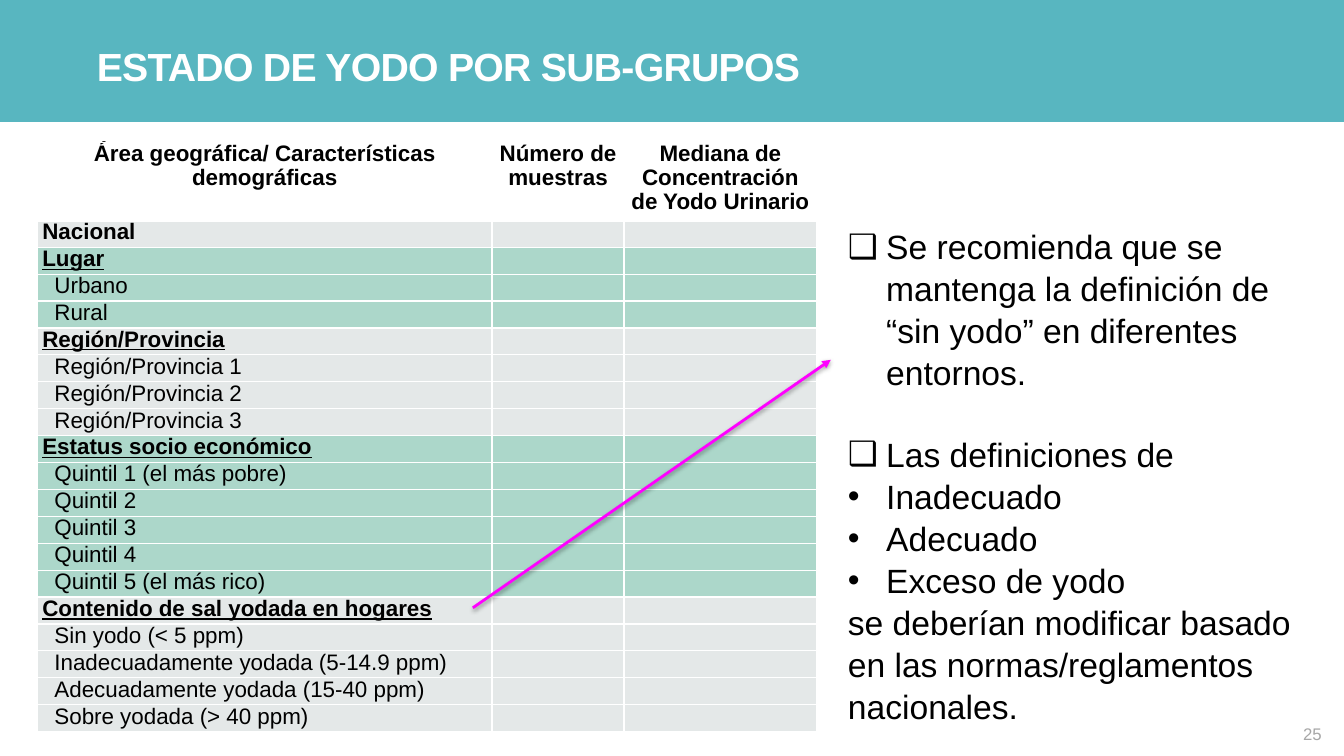
"""Build the slide on iodine status by sub-group."""
from typing import NamedTuple, Optional

from lxml.etree import SubElement
from pptx import Presentation
from pptx.dml.color import RGBColor
from pptx.enum.shapes import MSO_CONNECTOR, MSO_SHAPE
from pptx.enum.text import MSO_ANCHOR, PP_ALIGN
from pptx.oxml.ns import qn
from pptx.util import Inches, Pt

WHITE = RGBColor(0xFF, 0xFF, 0xFF)
BLACK = RGBColor(0x00, 0x00, 0x00)
TEAL = RGBColor(0x58, 0xB6, 0xC0)
GREEN = RGBColor(0xAC, 0xD7, 0xCA)
PALE = RGBColor(0xE4, 0xE8, 0xE8)
GREY = RGBColor(0xA7, 0xA7, 0xA7)
MAGENTA = RGBColor(0xFF, 0x00, 0xFF)


class Group(NamedTuple):
    heading: str
    fill: RGBColor
    members: tuple[str, ...] = ()
    underline: bool = True


class Remark(NamedTuple):
    text: str
    bullet: Optional[str] = None
    gap: float = 0


HEADERS = (
    "Área geográfica/ Características demográficas",
    "Número de muestras",
    "Mediana de Concentración de Yodo Urinario",
)
COLUMN_WIDTHS = (4.51, 1.31, 1.91)
HEADER_HEIGHT = 0.76
ROW_HEIGHT = 0.24

GROUPS = (
    Group("Nacional", PALE, underline=False),
    Group("Lugar", GREEN, ("Urbano", "Rural")),
    Group("Región/Provincia", PALE, tuple(f"Región/Provincia {n}" for n in (1, 2, 3))),
    Group("Estatus socio económico", GREEN, (
        "Quintil 1 (el más pobre)", "Quintil 2", "Quintil 3", "Quintil 4",
        "Quintil 5 (el más rico)")),
    Group("Contenido de sal yodada en hogares", PALE, (
        "Sin yodo (< 5 ppm)", "Inadecuadamente yodada (5-14.9 ppm)",
        "Adecuadamente yodada (15-40 ppm)", "Sobre yodada (> 40 ppm)")),
)

REMARKS = (
    Remark("Se recomienda que se mantenga la definición de “sin yodo” en diferentes entornos.", "❑"),
    Remark("Las definiciones de", "❑", gap=28.8),
    Remark("Inadecuado", "•"),
    Remark("Adecuado", "•"),
    Remark("Exceso de yodo", "•"),
    Remark("se deberían modificar basado en las normas/reglamentos nacionales."),
)


def write(paragraph, text: str, *, size: float, color: RGBColor = BLACK,
          bold: bool = False, underline: bool = False, align=PP_ALIGN.LEFT,
          spacing: float = 1.0, before: float = 0, indent: float = 0,
          bullet: Optional[str] = None, tracking: int = 0) -> None:
    """Write one formatted run into a paragraph."""
    paragraph.alignment = align
    paragraph.line_spacing = spacing
    if before:
        paragraph.space_before = Pt(before)
    properties = paragraph._p.get_or_add_pPr()
    if indent:
        properties.set("marL", str(Inches(indent)))
    if bullet:
        properties.set("indent", str(-Inches(indent)))
        SubElement(properties, qn("a:buFont"), typeface="Arial")
        SubElement(properties, qn("a:buChar"), char=bullet)
    if not text:
        SubElement(paragraph._p, qn("a:endParaRPr"), sz=str(int(size * 100)))
        return
    run = paragraph.add_run()
    run.text = text
    font = run.font
    font.name, font.size, font.bold, font.underline = "Arial", Pt(size), bold, underline
    font.color.rgb = color
    if tracking:
        run._r.get_or_add_rPr().set("spc", str(tracking))


def add_frame(slide, left: float, top: float, width: float, height: float, *,
              inset: float = 0.05, anchor=MSO_ANCHOR.TOP, wrap: bool = True):
    """Add a text box and return its text frame."""
    frame = slide.shapes.add_textbox(
        Inches(left), Inches(top), Inches(width), Inches(height)).text_frame
    frame.word_wrap = wrap
    frame.vertical_anchor = anchor
    frame.margin_left = frame.margin_right = Inches(inset)
    frame.margin_top = frame.margin_bottom = Inches(inset)
    return frame


def style_cell(cell, fill: RGBColor, bottom_width: float = 1) -> None:
    """Set the margins, white borders and fill of a cell."""
    cell.margin_left = cell.margin_right = Inches(0.05)
    cell.margin_top = cell.margin_bottom = 0
    properties = cell._tc.get_or_add_tcPr()
    for side, width in (("L", 1), ("R", 1), ("T", 1), ("B", bottom_width)):
        border = SubElement(properties, qn(f"a:ln{side}"), w=str(Pt(width)))
        SubElement(SubElement(border, qn("a:solidFill")), qn("a:srgbClr"), val=str(WHITE))
    cell.fill.solid()
    cell.fill.fore_color.rgb = fill


def add_iodine_table(slide) -> None:
    """Add the table of sub-groups."""
    row_count = 1 + sum(1 + len(group.members) for group in GROUPS)
    table = slide.shapes.add_table(
        row_count, len(HEADERS), Inches(0.37), Inches(1.41), Inches(sum(COLUMN_WIDTHS)),
        Inches(HEADER_HEIGHT + ROW_HEIGHT * (row_count - 1))).table
    for column, width in zip(table.columns, COLUMN_WIDTHS):
        column.width = Inches(width)
    for index, row in enumerate(table.rows):
        row.height = Inches(ROW_HEIGHT if index else HEADER_HEIGHT)
    for cell, header in zip(table.rows[0].cells, HEADERS):
        style_cell(cell, WHITE, bottom_width=3)
        write(cell.text_frame.paragraphs[0], header, size=16, bold=True,
              align=PP_ALIGN.CENTER, spacing=0.97)
    entries = [(group, text) for group in GROUPS for text in (group.heading, *group.members)]
    for index, (group, text) in enumerate(entries, start=1):
        is_heading = text == group.heading
        for column, cell in enumerate(table.rows[index].cells):
            style_cell(cell, group.fill)
            write(cell.text_frame.paragraphs[0], "" if column else text, size=16,
                  bold=is_heading, underline=is_heading and group.underline,
                  indent=0 if is_heading else 0.12, spacing=0.97)


def add_remarks(slide) -> None:
    """Add the recommendations beside the table."""
    frame = add_frame(slide, 8.36, 2.18, 4.51, 5.35)
    for index, remark in enumerate(REMARKS):
        paragraph = frame.add_paragraph() if index else frame.paragraphs[0]
        write(paragraph, remark.text, size=24, bullet=remark.bullet, before=remark.gap,
              indent=0.38 if remark.bullet else 0, spacing=1.04)


def add_arrow(slide) -> None:
    """Add the shadowed arrow from the table to the recommendation."""
    arrow = slide.shapes.add_connector(
        MSO_CONNECTOR.STRAIGHT, Inches(4.69), Inches(6.03), Inches(8.24), Inches(3.57))
    arrow.line.color.rgb = MAGENTA
    arrow.line.width = Pt(2)
    SubElement(arrow.line._get_or_add_ln(), qn("a:tailEnd"), type="triangle")
    effects = SubElement(arrow._element.spPr, qn("a:effectLst"))
    shadow = SubElement(effects, qn("a:outerShdw"), blurRad=str(Pt(3)), dist=str(Pt(1.6)),
                        dir="5400000", rotWithShape="0")
    tint = SubElement(shadow, qn("a:srgbClr"), val=str(BLACK))
    SubElement(tint, qn("a:alpha"), val="38000")


def main() -> None:
    """Build and save the slide."""
    deck = Presentation()
    deck.slide_width, deck.slide_height = Inches(13.33), Inches(7.5)
    slide = deck.slides.add_slide(deck.slide_layouts[6])
    banner = slide.shapes.add_shape(MSO_SHAPE.RECTANGLE, 0, 0, deck.slide_width, Inches(1.21))
    banner.shadow.inherit = False
    banner.fill.solid()
    banner.fill.fore_color.rgb = TEAL
    banner.line.fill.background()
    title = add_frame(slide, 0.96, 0.24, 10.41, 0.83, inset=0, anchor=MSO_ANCHOR.MIDDLE)
    write(title.paragraphs[0], "ESTADO DE YODO POR SUB-GRUPOS", size=28, color=WHITE,
          bold=True, tracking=-50)
    add_iodine_table(slide)
    page_number = add_frame(slide, 12.87, 7.13, 0.29, 0.3, anchor=MSO_ANCHOR.MIDDLE, wrap=False)
    write(page_number.paragraphs[0], "25", size=12, color=GREY, align=PP_ALIGN.RIGHT)
    add_remarks(slide)
    add_arrow(slide)
    deck.save("out.pptx")


if __name__ == "__main__":
    main()
